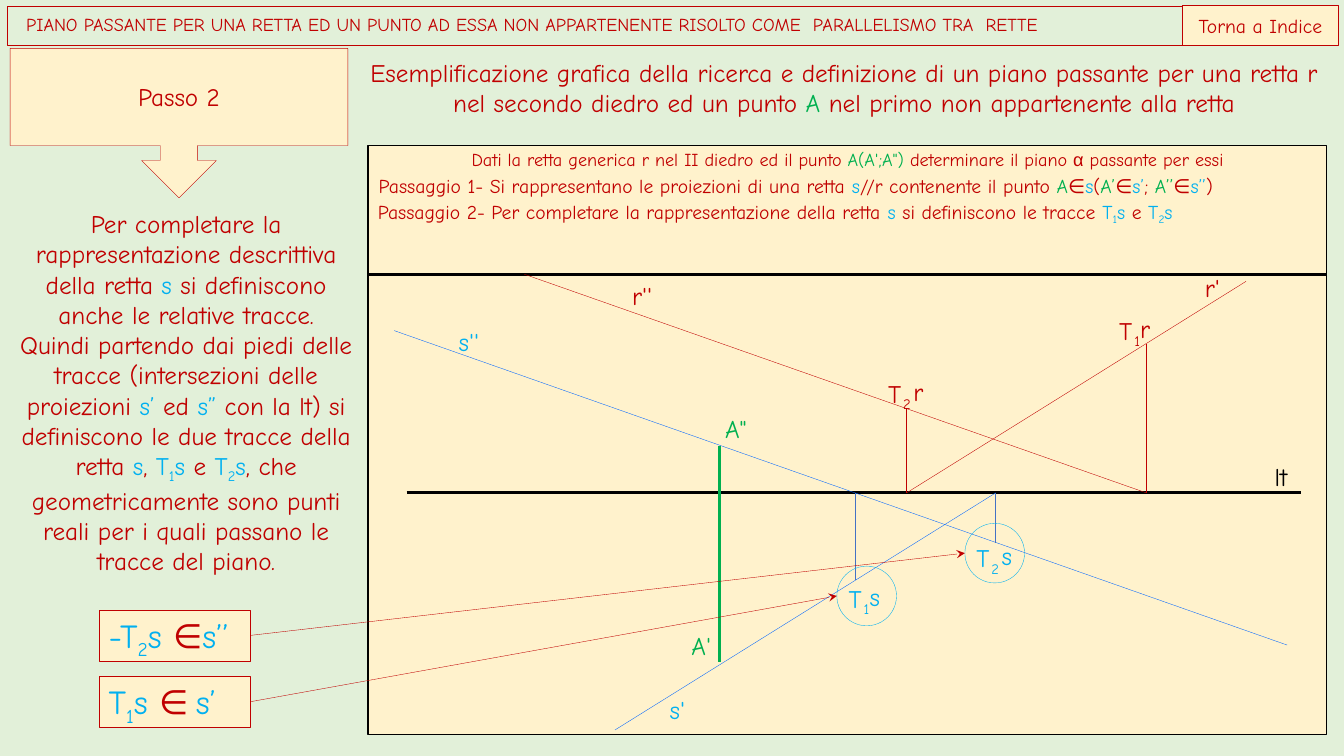
from pptx import Presentation
from pptx import util as u
from pptx.dml.color import RGBColor
from pptx.enum import shapes, text
from pptx.oxml import parse_xml
from pptx.oxml.ns import nsdecls

COLORS = {"red": "C00000", "green": "00B050", "cyan": "00B0F0", "blue": "0066FF",
          "drop": "4472C4", "black": "000000", "cream": "FFF2CC", "mint": "E2F0D9"}
MARKS = {"r": ("red", "Comic Neue"), "g": ("green", "Comic Neue"),
         "c": ("cyan", "Comic Neue"), "k": ("black", "Comic Neue"),
         "a": ("red", "Arial"), "e": ("red", "Calibri")}
LEFT, CENTER = text.PP_ALIGN.LEFT, text.PP_ALIGN.CENTER
TOP, MIDDLE = text.MSO_ANCHOR.TOP, text.MSO_ANCHOR.MIDDLE
SHAPE = shapes.MSO_SHAPE


class Board:
    """Draws on one slide with a grid of 160 columns by 90 rows."""

    def __init__(self):
        self.deck = Presentation()
        self.deck.slide_width = u.Inches(13.33)
        self.deck.slide_height = u.Inches(7.5)
        self.slide = self.deck.slides.add_slide(self.deck.slide_layouts[6])
        background = self.slide.background.fill
        background.solid()
        background.fore_color.rgb = self.color("mint")

    def color(self, name):
        return RGBColor.from_string(COLORS[name])

    def cells(self, *counts):
        return [u.Inches(count / 12) for count in counts]

    def compose(self, frame, markup, size, align=LEFT, anchor=TOP, spacing=None):
        """Pieces between bars start with a MARKS letter, or _ for a subscript."""
        frame.vertical_anchor = anchor
        paragraph = frame.paragraphs[0]
        paragraph.alignment = align
        if spacing:
            paragraph.line_spacing = spacing
        for piece in markup.split("|"):
            mark, wording = piece[0], piece[1:]
            if mark != "_":
                color, face = MARKS[mark]
            if not wording:
                continue
            run = paragraph.add_run()
            run.text = wording
            run.font.size = u.Pt(size)
            run.font.name = face
            run.font.color.rgb = self.color(color)
            if mark == "_":
                run.font._element.set("baseline", "-25000")

    def box(self, kind, place, line="red", fill=None, width=0.25, inset=None, markup="", **style):
        figure = self.slide.shapes.add_shape(kind, *self.cells(*place))
        figure.shadow.inherit = False
        if fill:
            figure.fill.solid()
            figure.fill.fore_color.rgb = self.color(fill)
        else:
            figure.fill.background()
        figure.line.color.rgb = self.color(line)
        figure.line.width = u.Pt(width)
        if inset:
            figure.text_frame.margin_left = u.Inches(inset)
        if markup:
            self.compose(figure.text_frame, markup, **style)

    def note(self, place, markup, size, align=LEFT, inset=True, wrap=True):
        frame = self.slide.shapes.add_textbox(*self.cells(*place)).text_frame
        frame.word_wrap = wrap
        frame.auto_size = text.MSO_AUTO_SIZE.SHAPE_TO_FIT_TEXT
        if not inset:
            frame.margin_left = frame.margin_right = frame.margin_top = frame.margin_bottom = 0
        self.compose(frame, markup, size, align)

    def label(self, x, y, width, markup, height=3.6):
        self.note((x, y, width, height), markup, 18, inset=False, wrap=False)

    def trace(self, x, y, mark, digit, line_name):
        step = 2.5 if digit == "1" else 3
        self.label(x, y, 2, mark + "T")
        self.label(x + 1.8, y, step - 1.6, f"{mark}|_{digit}", 2.4)
        self.label(x + step, y - 0.24, 1.4, mark + line_name)

    def line(self, start, end, color, width=0.25, arrow=False):
        link = self.slide.shapes.add_connector(
            shapes.MSO_CONNECTOR.STRAIGHT, *self.cells(*start, *end))
        link.line.color.rgb = self.color(color)
        link.line.width = u.Pt(width)
        if arrow:
            link.line._get_or_add_ln().append(
                parse_xml(f'<a:tailEnd {nsdecls("a")} type="stealth"/>'))
        link._element.spPr.append(parse_xml(f'<a:effectLst {nsdecls("a")}/>'))


def main():
    board = Board()
    board.box(SHAPE.DOWN_ARROW_CALLOUT, (1.2, 5.76, 40.2, 17.8), fill="cream",
              markup="rPasso 2", size=18, align=CENTER, anchor=MIDDLE)
    board.note((41.4, 6.24, 118.1, 8.5),
               "rEsemplificazione grafica della ricerca e definizione di un piano passante "
               "per una retta r nel secondo diedro ed un punto |gA |rnel primo non "
               "appartenente alla retta", 18, CENTER)
    board.box(SHAPE.RECTANGLE, (0.84, 0.7, 158.3, 4.7), inset=0.19,
              markup="rPIANO PASSANTE PER UNA RETTA ED UN PUNTO AD ESSA NON APPARTENENTE "
                     "RISOLTO COME  PARALLELISMO TRA  RETTE",
              size=13, anchor=MIDDLE, spacing=0.9)
    board.box(SHAPE.RECTANGLE, (140.76, 0.65, 18.5, 4.7), fill="cream",
              markup="rTorna a Indice", size=14, align=CENTER, anchor=MIDDLE)

    left, right, ground = 43.8, 157.92, 58.68
    board.box(SHAPE.RECTANGLE, (left, 17.3, right - left, 70.1), "black", "cream", 0)
    board.line((left, 32.65), (right, 32.65), "black", 0)
    board.line((48.4, ground), (154.8, ground), "black", 0)
    board.line((85.68, 53.04), (85.68, 78.84), "green", 0)
    for start, end, color in [
            ((62.4, 32.65), (136.44, ground), "red"),
            ((107.9, ground), (148.3, 33.5), "red"),
            ((107.9, ground), (107.9, 48.6), "red"),
            ((136.44, ground), (136.44, 40.92), "red"),
            ((73.2, 86.9), (118.5, ground), "blue"),
            ((46.92, 39.36), (153.2, 76.8), "blue"),
            ((101.8, ground), (101.8, 69.1), "drop"),
            ((118.5, ground), (118.5, 64.7), "drop")]:
        board.line(start, end, color)

    for x, y, width, name in [
            (151.7, 54.96, 3.5, "klt"), (82.3, 75, 3.4, "gA'"), (86.3, 49.2, 3.5, 'gA"'),
            (143.4, 32.4, 2.6, "rr'"), (75.24, 33.36, 3.8, "rr''"),
            (79.7, 82.7, 2.6, "cs'"), (54.6, 38.9, 3.8, "cs''")]:
        board.label(x, y, width, name)
    for trace in [(133.2, 37.56, "r", "1", "r"), (105.7, 45, "r", "2", "r"),
                  (101, 69.4, "c", "1", "s"), (116.2, 64.6, "c", "2", "s")]:
        board.trace(*trace)

    board.note((left, 17.64, right - left, 2.6),
               "rDati la retta generica r nel II diedro ed il punto |gA(A';A\") |r"
               "determinare il piano |aα|r passante per essi", 13, CENTER, inset=False)
    board.note((43.9, 20.16, 114.2, 4.1),
               "rPassaggio 1- Si rappresentano le proiezioni di una retta|c s|r//r contenente "
               "il punto |gA|r∈|cs|r(|gA’|r∈|cs’|r; |gA’’|r∈|cs’’|r)", 14)
    board.note((left, 23.16, 114.2, 4.1),
               "rPassaggio 2- Per completare la rappresentazione della retta |cs|r si "
               "definiscono le tracce |cT|_1|cs|r e |cT|_2|cs", 14)
    board.note((1.2, 24.24, 41.9, 48.5),
               "rPer completare la rappresentazione descrittiva della retta |cs|r si definiscono "
               "anche le relative tracce. Quindi partendo dai piedi delle tracce (intersezioni "
               "delle proiezioni |cs’ |red |cs” |rcon la lt) si definiscono le due tracce della "
               "retta |cs|r, |cT|_1|cs|r e |cT|_2|cs|r, che geometricamente sono punti reali "
               "per i quali passano le tracce del piano.", 18, CENTER)

    ring = 7.1
    for top, membership, ring_left, ring_top in [
            (80.5, "cT|_1|cs |e∈ |cs’", 99.6, 67.4),
            (72.6, "c-T|_2|cs |e∈|cs’’", 114.84, 62.3)]:
        board.box(SHAPE.RECTANGLE, (11.76, top, 18, 6.1), fill="cream",
                  markup=membership, size=24)
        board.box(SHAPE.OVAL, (ring_left, ring_top, ring, ring), "cyan")
        board.line((29.76, top + 3.05), (ring_left, ring_top + ring / 2), "red", arrow=True)
    board.deck.save("out.pptx")


if __name__ == "__main__":
    main()
